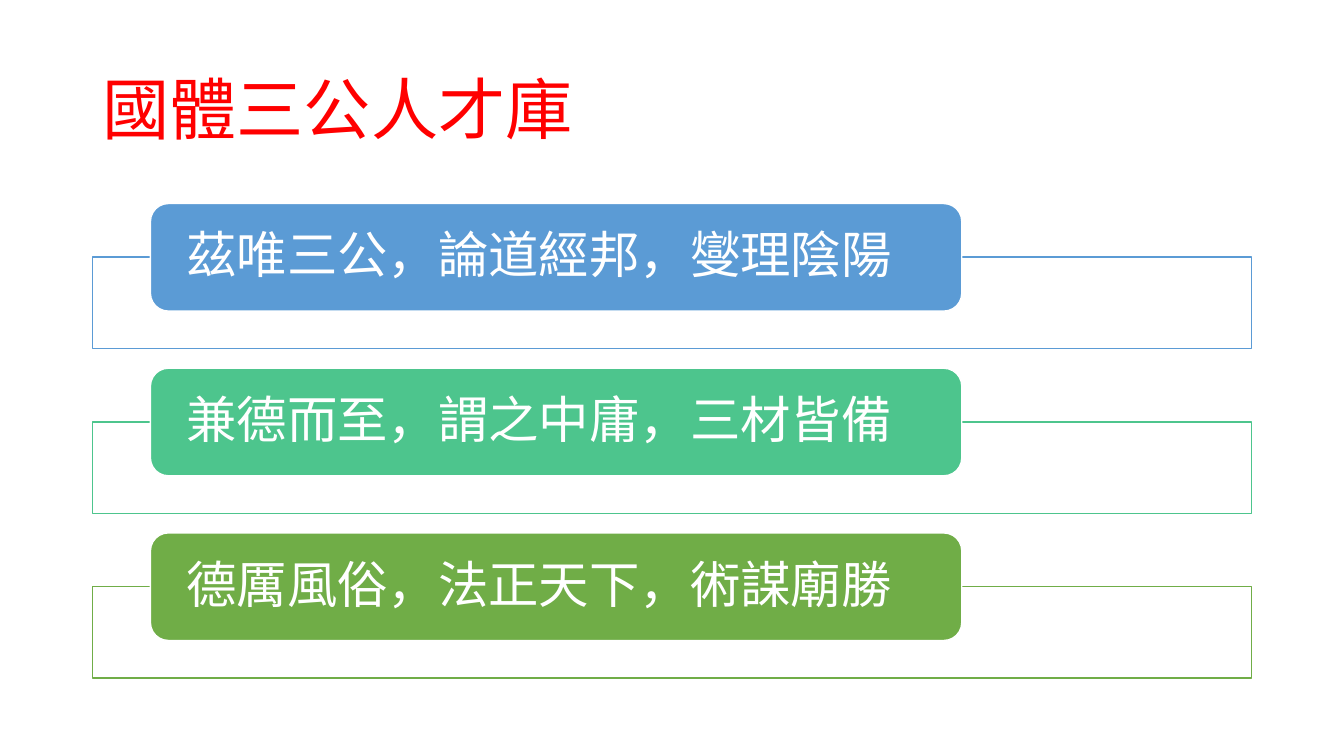
from lxml import etree
from pptx import Presentation
from pptx import util as u
from pptx.dml.color import RGBColor
from pptx.enum import shapes, text
from pptx.oxml import ns

MOTTOS = [
    ("茲唯三公，論道經邦，燮理陰陽", "5B9BD5"),
    ("兼德而至，謂之中庸，三材皆備", "4DC58D"),
    ("德厲風俗，法正天下，術謀廟勝", "70AD47"),
]
PITCH = 4.15


def color(code):
    return RGBColor.from_string(code)


def paint(shape, fill, line):
    shape.shadow.inherit = False
    shape.fill.solid()
    shape.fill.fore_color.rgb = color(fill)
    shape.line.color.rgb = color(line)
    shape.line.width = u.Pt(1)


def write(shape, words, size, font, ink):
    frame = shape.text_frame
    frame.text = words
    frame.word_wrap = True
    frame.vertical_anchor = text.MSO_ANCHOR.MIDDLE
    para = frame.paragraphs[0]
    para.alignment = text.PP_ALIGN.LEFT
    para.line_spacing = 0.9
    run = para.runs[0]
    run.font.size = u.Pt(size)
    run.font.name = font
    run.font.color.rgb = color(ink)
    return run


def add_title(slide, left, top, width, height):
    box = slide.shapes.add_textbox(
        u.Cm(left), u.Cm(top), u.Cm(width), u.Cm(height))
    write(box, "國體三公人才庫", 48, "Calibri", "FF0000")


def add_motto(slide, left, top, width, words, tint):
    # Outlined frame behind, mostly opaque white
    frame = slide.shapes.add_shape(
        shapes.MSO_SHAPE.RECTANGLE,
        u.Cm(left), u.Cm(top + 1.35), u.Cm(width), u.Cm(2.31))
    paint(frame, "FFFFFF", tint)
    white = frame.fill._xPr.find(".//" + ns.qn("a:srgbClr"))
    etree.SubElement(white, ns.qn("a:alpha"), val="90000")

    # Rounded label in front, 70% of the frame's width
    label = slide.shapes.add_shape(
        shapes.MSO_SHAPE.ROUNDED_RECTANGLE,
        u.Cm(left + width * 0.05), u.Cm(top), u.Cm(width * 0.7), u.Cm(2.71))
    paint(label, tint, "FFFFFF")
    font = "Noto Sans CJK SC"
    run = write(label, words, 36, font, "FFFFFF")
    etree.SubElement(run.font._element, ns.qn("a:ea"), typeface=font)
    inner = label.text_frame
    inner.margin_left = inner.margin_right = u.Cm(0.77)
    inner.margin_top = inner.margin_bottom = 0


def main():
    deck = Presentation()
    deck.slide_width, deck.slide_height = u.Cm(33.87), u.Cm(19.05)
    slide = deck.slides.add_slide(deck.slide_layouts[6])
    add_title(slide, 2.33, 1.01, 29.21, 3.68)
    for row, (words, tint) in enumerate(MOTTOS):
        add_motto(slide, 2.33, 5.13 + row * PITCH, 29.21, words, tint)
    deck.save("out.pptx")


if __name__ == "__main__":
    main()
